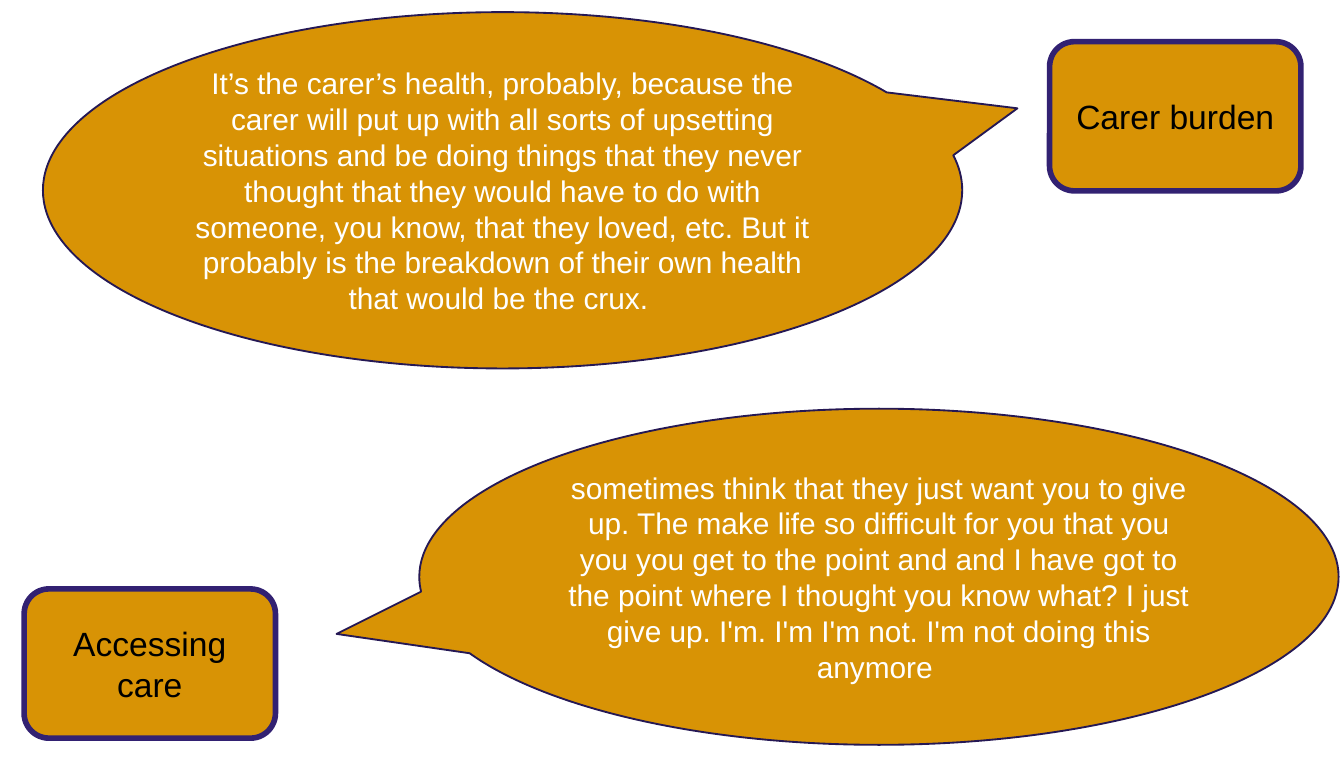
from dataclasses import dataclass

from pptx import Presentation
from pptx import util as u
from pptx.dml.color import RGBColor
from pptx.enum import shapes, text


@dataclass(frozen=True)
class Theme:
    font: str = "Arial"
    gold: str = "D89305"
    edge: str = "322172"
    rim: str = "251854"
    dark: str = "000000"
    light: str = "FFFFFF"
    label: int = 18
    quote: int = 16


class Page:
    def __init__(self, slide, theme):
        self.slide = slide
        self.theme = theme

    def shape(self, kind, box, words, line, width, size, color):
        item = self.slide.shapes.add_shape(kind, *(u.Inches(n) for n in box))
        item.shadow.inherit = False
        item.fill.solid()
        item.fill.fore_color.rgb = RGBColor.from_string(self.theme.gold)
        item.line.color.rgb = RGBColor.from_string(line)
        item.line.width = u.Pt(width)
        frame = item.text_frame
        frame.word_wrap = True
        frame.vertical_anchor = text.MSO_ANCHOR.MIDDLE
        para = frame.paragraphs[0]
        para.text = words
        para.alignment = text.PP_ALIGN.CENTER
        para.font.name = self.theme.font
        para.font.size = u.Pt(size)
        para.font.color.rgb = RGBColor.from_string(color)
        return item

    def label(self, left, top, words):
        t = self.theme
        self.shape(shapes.MSO_SHAPE.ROUNDED_RECTANGLE, (left, top, 1.87, 1.11),
                   words, t.edge, 3, t.label, t.dark)

    def quote(self, left, top, height, tip, words):
        t = self.theme
        item = self.shape(shapes.MSO_SHAPE.OVAL_CALLOUT, (left, top, 6.84, height),
                          words, t.rim, 1, t.quote, t.light)
        for i, value in enumerate(tip):
            item.adjustments[i] = value


def main():
    deck = Presentation()
    deck.slide_width = u.Inches(10)
    deck.slide_height = u.Inches(5.63)
    page = Page(deck.slides.add_slide(deck.slide_layouts[6]), Theme())

    page.label(7.81, 0.31, "Carer burden")
    page.quote(0.32, 0.09, 2.65, (0.56, -0.23),
               "It’s the carer’s health, probably, because the carer will put up "
               "with all sorts of upsetting situations and be doing things that "
               "they never thought that they would have to do with someone, you "
               "know, that they loved, etc. But it probably is the breakdown of "
               "their own health that would be the crux. ")
    page.label(0.18, 4.38, "Accessing care")
    page.quote(3.12, 3.04, 2.5, (-0.59, 0.17),
               "sometimes think that they just want you to give up. The make life "
               "so difficult for you that you you you get to the point and and I "
               "have got to the point where I thought you know what? I just give "
               "up. I'm. I'm I'm not. I'm not doing this anymore ")
    deck.save("out.pptx")


if __name__ == "__main__":
    main()
